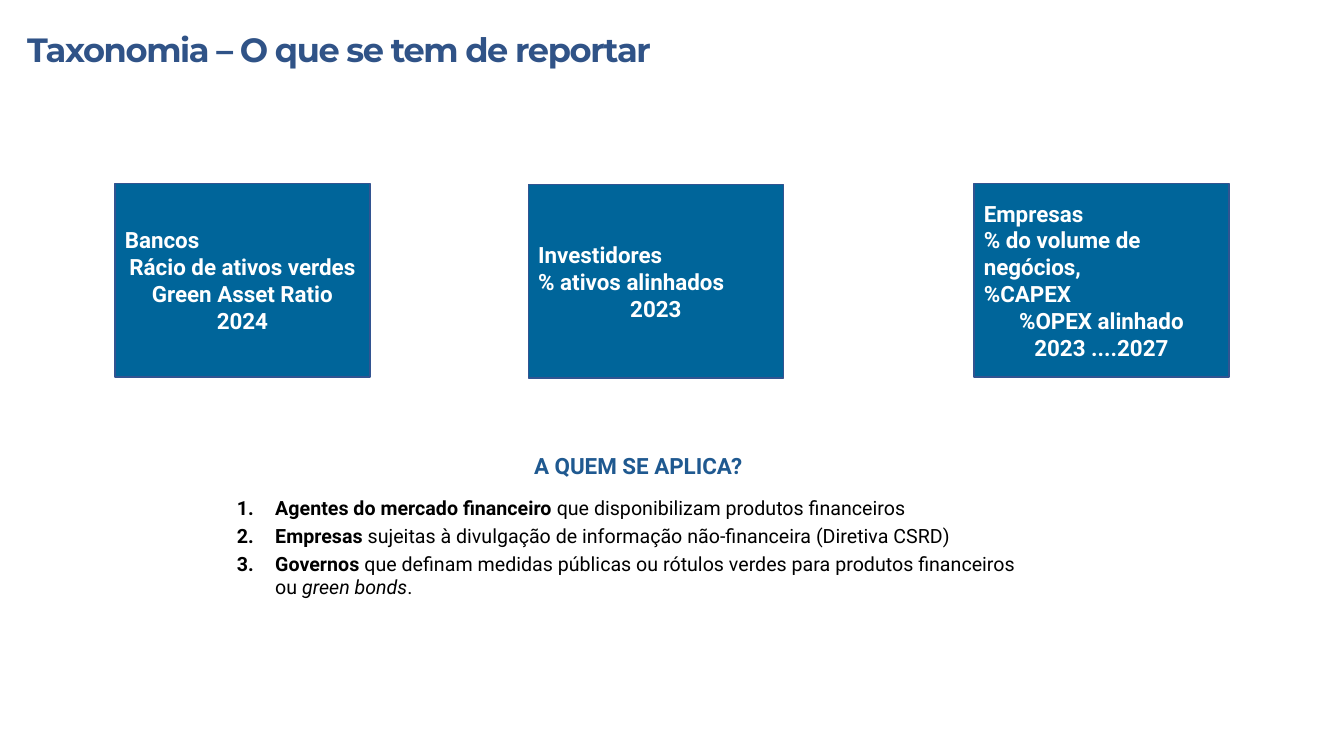
from dataclasses import dataclass

from lxml.etree import SubElement
from pptx import Presentation
from pptx.dml.color import RGBColor
from pptx.enum.shapes import MSO_SHAPE
from pptx.enum.text import MSO_ANCHOR, MSO_AUTO_SIZE, PP_ALIGN
from pptx.oxml.ns import qn
from pptx.util import Inches, Pt

COLORS = {
    "box": "00659A",
    "border": "325491",
    "title": "305387",
    "heading": "1F5990",
    "white": "FFFFFF",
    "black": "000000",
}


@dataclass
class Box:
    """A reporting group, with its left-aligned and centred lines."""
    left: float
    top: float
    left_lines: list[str]
    centred_lines: list[str]


@dataclass
class Part:
    """A stretch of list text with its own emphasis."""
    text: str
    bold: bool = False
    italic: bool = False


BOXES = [
    Box(1.14, 1.82, ["Bancos"],
        ["Rácio de ativos verdes", "Green Asset Ratio", "2024"]),
    Box(5.24, 1.83, ["Investidores", "% ativos alinhados"], ["2023"]),
    Box(9.66, 1.82, ["Empresas", "% do volume de negócios,", "%CAPEX"],
        ["%OPEX alinhado", "2023 ....2027"]),
]

ITEMS = [
    [Part("Agentes do mercado financeiro ", bold=True),
     Part("que disponibilizam produtos financeiros")],
    [Part("Empresas", bold=True),
     Part(" sujeitas à divulgação de informação não-financeira (Diretiva CSRD)")],
    [Part("Governos", bold=True),
     Part(" que definam medidas públicas ou rótulos verdes para produtos financeiros ou "),
     Part("green bonds", italic=True),
     Part(".")],
]


def rgb(name: str) -> RGBColor:
    """Return a named colour."""
    return RGBColor.from_string(COLORS[name])


def style(font, size: float, color: str, bold: bool = True,
          italic: bool = False, name: str = "Roboto") -> None:
    """Format a font."""
    font.name = name
    font.size = Pt(size)
    font.bold = bold
    font.italic = italic
    font.color.rgb = rgb(color)


def place(sp, left: float, top: float, width: float, height: float) -> None:
    """Position a shape, in inches."""
    sp.left, sp.top = Inches(left), Inches(top)
    sp.width, sp.height = Inches(width), Inches(height)


def draw_title(sp) -> None:
    """Fill the title placeholder."""
    place(sp, 0.27, 0.26, 10.43, 0.41)
    tf = sp.text_frame
    tf.text = "Taxonomia – O que se tem de reportar"
    tf.margin_left = tf.margin_right = tf.margin_top = tf.margin_bottom = 0
    tf.vertical_anchor = MSO_ANCHOR.TOP
    tf.auto_size = MSO_AUTO_SIZE.SHAPE_TO_FIT_TEXT
    p = tf.paragraphs[0]
    p.alignment = PP_ALIGN.LEFT
    p.line_spacing = Pt(30.8)
    r = p.runs[0]
    style(r.font, 24, "title", name="Montserrat")
    r.font._element.set("spc", "-100")


def draw_box(s, box: Box) -> None:
    """Draw one reporting group."""
    sp = s.shapes.add_shape(MSO_SHAPE.RECTANGLE, Inches(box.left), Inches(box.top),
                            Inches(2.53), Inches(1.92))
    sp.shadow.inherit = False
    sp.fill.solid()
    sp.fill.fore_color.rgb = rgb("box")
    sp.line.color.rgb = rgb("border")
    sp.line.width = Pt(1)
    tf = sp.text_frame
    tf.word_wrap = True
    tf.vertical_anchor = MSO_ANCHOR.MIDDLE
    tf.text = "\n".join(box.left_lines + box.centred_lines)
    for i, p in enumerate(tf.paragraphs):
        p.alignment = PP_ALIGN.LEFT if i < len(box.left_lines) else PP_ALIGN.CENTER
        style(p.runs[0].font, 16, "white")


def draw_heading(s) -> None:
    """Draw the heading above the list."""
    sp = s.shapes.add_textbox(Inches(5.14), Inches(4.44), Inches(2.38), Inches(0.37))
    tf = sp.text_frame
    tf.word_wrap = True
    tf.text = "A QUEM SE APLICA?"
    p = tf.paragraphs[0]
    p.alignment = PP_ALIGN.CENTER
    style(p.runs[0].font, 16, "heading")


def draw_list(sp, items: list[list[Part]]) -> None:
    """Fill the body placeholder with a numbered list."""
    place(sp, 2.25, 4.87, 8.19, 1.13)
    tf = sp.text_frame
    tf.word_wrap = True
    tf.auto_size = MSO_AUTO_SIZE.SHAPE_TO_FIT_TEXT
    for i, parts in enumerate(items):
        p = tf.add_paragraph() if i else tf.paragraphs[0]
        pPr = p._p.get_or_add_pPr()
        pPr.set("marL", str(Inches(0.38)))
        pPr.set("indent", str(-Inches(0.38)))
        SubElement(pPr, qn("a:buFont"), typeface="+mj-lt")
        SubElement(pPr, qn("a:buAutoNum"), type="arabicPeriod")
        p.space_before = Pt(0)
        p.space_after = Pt(3)
        for part in parts:
            r = p.add_run()
            r.text = part.text
            style(r.font, 14, "black", part.bold, part.italic)


def main() -> None:
    """Build the slide."""
    prs = Presentation()
    prs.slide_width, prs.slide_height = Inches(13.33), Inches(7.5)
    s = prs.slides.add_slide(prs.slide_layouts[1])
    draw_title(s.shapes.title)
    for box in BOXES:
        draw_box(s, box)
    draw_list(s.placeholders[1], ITEMS)
    draw_heading(s)
    prs.save("out.pptx")


if __name__ == "__main__":
    main()
